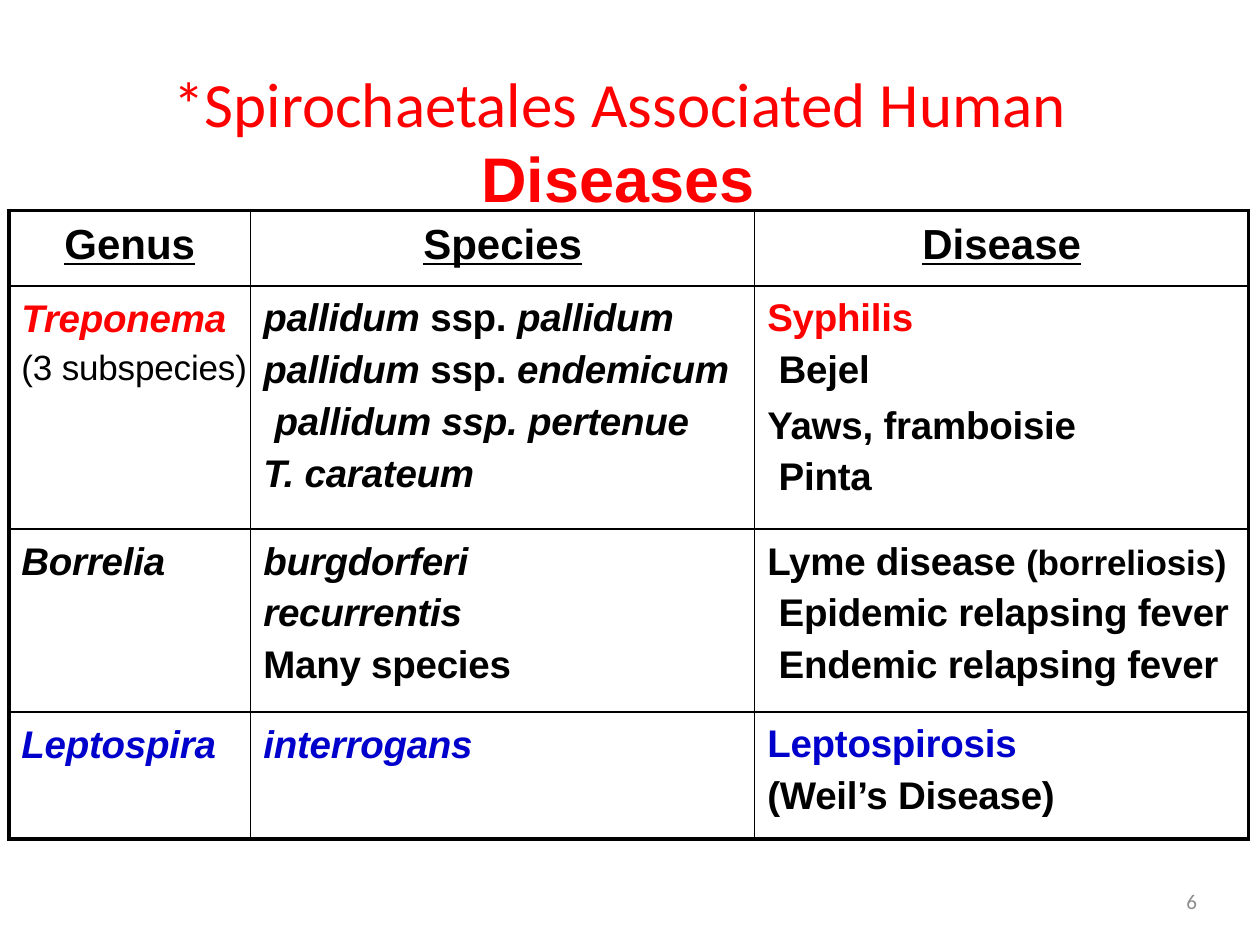
from lxml.etree import SubElement
from pptx import Presentation
from pptx.dml.color import RGBColor
from pptx.enum.text import MSO_ANCHOR, PP_ALIGN
from pptx.oxml.ns import qn
from pptx.util import Inches, Pt

BLACK = RGBColor(0, 0, 0)
RED = RGBColor(255, 0, 0)
BLUE = RGBColor(0, 0, 204)
GRAY = RGBColor(140, 140, 140)

HEADERS = ["Genus", "Species", "Disease"]
COLUMN_WIDTHS = [1.92, 4, 3.92]
ROW_HEIGHTS = [0.6, 1.93, 1.45, 1.01]
TABLE_LEFT, TABLE_TOP = 0.07, 1.67
TEXT_INDENT, HANGING_STEP = 0.1, 0.09
OUTER_LINE, INNER_LINE = 2.25, 1


def run(text, style="b", color=BLACK, size=22):
    return text, style, color, size


def line(*runs, step=0, before=0, spacing=1.2):
    return runs, step, before, spacing


ROWS = [
    [
        [line(run("Treponema", "bi", RED), spacing=1),
         line(run("(3 subspecies)", "", size=20), before=4.8, spacing=1)],
        [line(run("pallidum ", "bi"), run("ssp. "), run("pallidum", "bi")),
         line(run("pallidum ", "bi"), run("ssp. "), run("endemicum", "bi")),
         line(run("pallidum ssp. pertenue", "bi"), step=1),
         line(run("T. carateum", "bi"), before=5.3, spacing=1)],
        [line(run("Syphilis", color=RED)),
         line(run("Bejel"), step=1),
         line(run("Yaws, framboisie"), before=2.2),
         line(run("Pinta"), step=1)],
    ],
    [
        [line(run("Borrelia", "bi"), spacing=1)],
        [line(run("burgdorferi", "bi")),
         line(run("recurrentis", "bi")),
         line(run("Many species"))],
        [line(run("Lyme disease "), run("(borreliosis)", size=20)),
         line(run("Epidemic relapsing fever"), step=1),
         line(run("Endemic relapsing fever"), step=1)],
    ],
    [
        [line(run("Leptospira", "bi", BLUE), spacing=1)],
        [line(run("interrogans", "bi", BLUE), spacing=1)],
        [line(run("Leptospirosis", color=BLUE)),
         line(run("(Weil’s Disease)"))],
    ],
]

TEXT_BOXES = [
    ((0.72, 0.49, 8.4, 0.63), "*Spirochaetales Associated Human",
     "Calibri", 36, RED, False, PP_ALIGN.CENTER, 0.01),
    ((3.82, 1.09, 2.2, 0.63), "Diseases",
     "Arial", 36, RED, True, PP_ALIGN.LEFT, 0.01),
    ((7.17, 6.95, 2.33, 0.4), "6",
     "Calibri", 12, GRAY, False, PP_ALIGN.RIGHT, 0),
]


def style_font(font, name, size, color, bold=False, italic=False):
    font.name = name
    font.size = Pt(size)
    font.color.rgb = color
    font.bold = bold
    font.italic = italic


def set_margins(target, top):
    target.margin_left = target.margin_right = target.margin_bottom = 0
    target.margin_top = Inches(top)


def add_text_box(slide, place, text, name, size, color, bold, alignment, top):
    frame = slide.shapes.add_textbox(*map(Inches, place)).text_frame
    frame.word_wrap = True
    frame.vertical_anchor = MSO_ANCHOR.MIDDLE
    set_margins(frame, top)
    frame.text = text
    paragraph = frame.paragraphs[0]
    paragraph.alignment = alignment
    style_font(paragraph.runs[0].font, name, size, color, bold)


def fill_cell(cell, lines):
    for index, (runs, step, before, spacing) in enumerate(lines):
        frame = cell.text_frame
        paragraph = frame.add_paragraph() if index else frame.paragraphs[0]
        indent = Inches(TEXT_INDENT + step * HANGING_STEP)
        paragraph._p.get_or_add_pPr().set("marL", str(indent))
        paragraph.line_spacing = spacing
        if before:
            paragraph.space_before = Pt(before)
        for text, style, color, size in runs:
            text_run = paragraph.add_run()
            text_run.text = text
            style_font(text_run.font, "Arial", size, color, "b" in style, "i" in style)
            text_run.font._element.set("spc", "-10")


def fill_header(cell, text):
    cell.text = text
    paragraph = cell.text_frame.paragraphs[0]
    paragraph.alignment = PP_ALIGN.CENTER
    style_font(paragraph.runs[0].font, "Arial", 24, BLACK, bold=True)
    paragraph.runs[0].font.underline = True


def set_borders(cell, outer_sides):
    properties = cell._tc.get_or_add_tcPr()
    for side in ("L", "R", "T", "B"):
        width = OUTER_LINE if side in outer_sides else INNER_LINE
        border = SubElement(properties, qn(f"a:ln{side}"), w=str(Pt(width)))
        fill = SubElement(border, qn("a:solidFill"))
        SubElement(fill, qn("a:srgbClr"), val=str(BLACK))


def add_disease_table(slide):
    row_count, column_count = len(ROW_HEIGHTS), len(COLUMN_WIDTHS)
    table = slide.shapes.add_table(
        row_count, column_count, Inches(TABLE_LEFT), Inches(TABLE_TOP),
        Inches(sum(COLUMN_WIDTHS)), Inches(sum(ROW_HEIGHTS))).table
    table.first_row = table.horz_banding = False
    for column, width in zip(table.columns, COLUMN_WIDTHS):
        column.width = Inches(width)
    for row_index, height in enumerate(ROW_HEIGHTS):
        table.rows[row_index].height = Inches(height)
        for column_index in range(column_count):
            cell = table.cell(row_index, column_index)
            edges = {"L": column_index == 0, "R": column_index == column_count - 1,
                     "T": row_index == 0, "B": row_index == row_count - 1}
            set_borders(cell, [side for side, outer in edges.items() if outer])
            cell.fill.background()
            if row_index == 0:
                set_margins(cell, 0.09)
                fill_header(cell, HEADERS[column_index])
            else:
                lines = ROWS[row_index - 1][column_index]
                set_margins(cell, 0.02 if lines[0][3] > 1 else 0.09)
                fill_cell(cell, lines)


def main():
    presentation = Presentation()
    presentation.slide_width = Inches(10)
    presentation.slide_height = Inches(7.5)
    slide = presentation.slides.add_slide(presentation.slide_layouts[6])
    add_disease_table(slide)
    for text_box in TEXT_BOXES:
        add_text_box(slide, *text_box)
    presentation.save("out.pptx")


if __name__ == "__main__":
    main()
